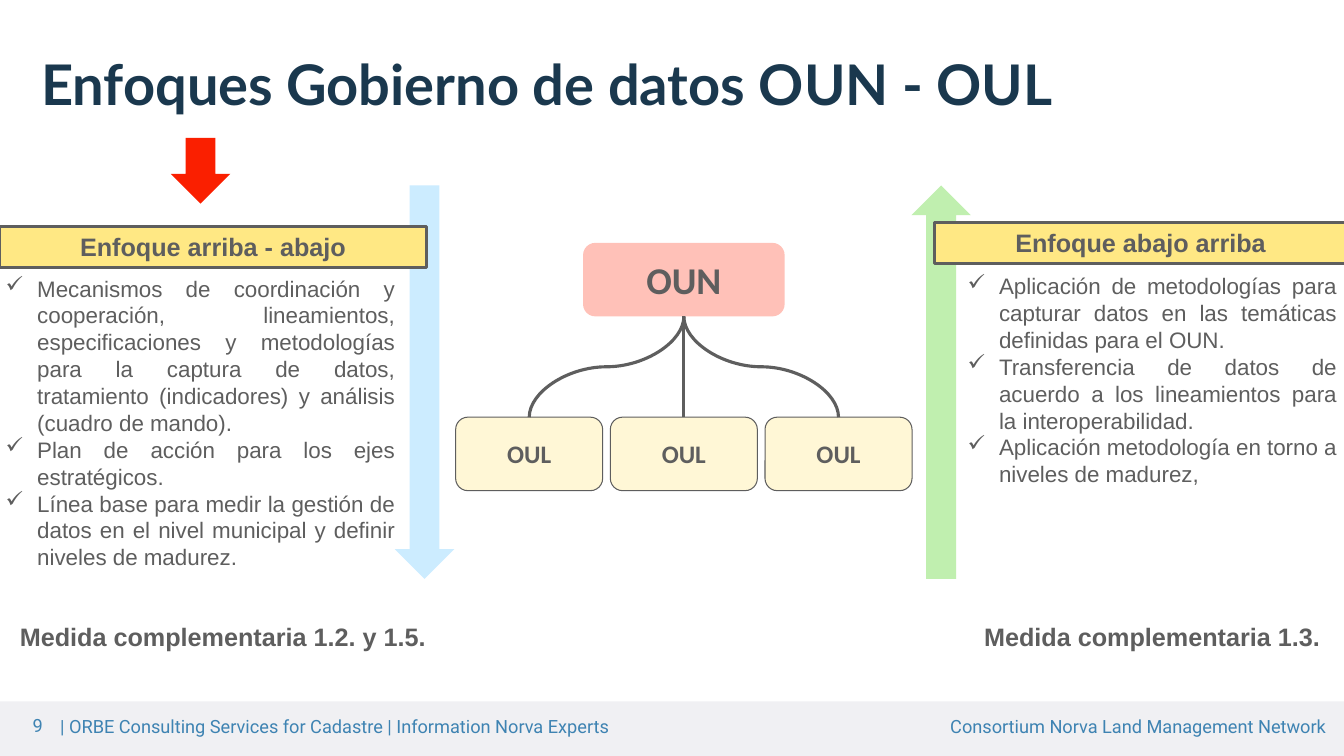
from dataclasses import dataclass

from lxml.etree import SubElement
from pptx import Presentation
from pptx.dml.color import RGBColor
from pptx.enum.shapes import MSO_CONNECTOR, MSO_SHAPE
from pptx.enum.text import MSO_ANCHOR as Anchor, PP_ALIGN as Align
from pptx.oxml.ns import qn
from pptx.util import Pt


@dataclass(frozen=True)
class Theme:
    ink: str = "5E5E5E"
    navy: str = "1A384E"
    footer_blue: str = "3E83B2"
    footer_band: str = "F0F0F3"
    national: str = "FFC1B8"
    local: str = "FFF7D6"
    banner: str = "FFE884"
    descending: str = "CCECFF"
    ascending: str = "C0EFAF"
    marker: str = "FA1F00"
    title_size: float = 40
    national_size: float = 27
    heading_size: float = 18
    body_size: float = 16
    body_leading: float = 19.2
    footer_size: float = 13


THEME = Theme()


def rgb(code):
    return RGBColor.from_string(code)


def place(shape, box):
    shape.left, shape.top, shape.width, shape.height = map(Pt, box)


def write(shape, lines, size, font, color, bold=False, align=Align.CENTER,
          anchor=Anchor.TOP, inset=None):
    frame = shape.text_frame
    frame.text = "\n".join(lines)
    frame.word_wrap = True
    frame.vertical_anchor = anchor
    if inset is not None:
        frame.margin_left = frame.margin_right = Pt(inset)
        frame.margin_top = frame.margin_bottom = Pt(inset)
    for paragraph in frame.paragraphs:
        paragraph.alignment = align
        for run in paragraph.runs:
            run.font.size = Pt(size)
            run.font.name = font
            run.font.bold = bold
            run.font.color.rgb = rgb(color)


def add_label(slide, box, text, size, font, color, **style):
    label = slide.shapes.add_textbox(*map(Pt, box))
    write(label, [text], size, font, color, **style)


def add_block(slide, kind, box, fill, line_width=0):
    block = slide.shapes.add_shape(kind, *map(Pt, box))
    block.shadow.inherit = False
    block.fill.solid()
    block.fill.fore_color.rgb = rgb(fill)
    if line_width:
        block.line.color.rgb = rgb(THEME.ink)
        block.line.width = Pt(line_width)
    else:
        block.line.fill.background()
    return block


def add_node(slide, box, text, fill, size, line_width=0):
    node = add_block(slide, MSO_SHAPE.FLOWCHART_ALTERNATE_PROCESS, box, fill, line_width)
    write(node, [text], size, "Calibri", THEME.ink, bold=True,
          anchor=Anchor.MIDDLE, inset=7.2)


def add_branch(slide, start, end):
    (x0, y0), (x1, y1) = start, end
    mid_x, mid_y = (x0 + x1) / 2, (y0 + y1) / 2
    half_drop, half_reach = (y1 - y0) / 2, (x0 - x1) / 2
    branch = slide.shapes.add_connector(
        MSO_CONNECTOR.CURVE,
        Pt(mid_x - half_drop), Pt(mid_y - half_reach),
        Pt(mid_x + half_drop), Pt(mid_y + half_reach))
    branch.line.color.rgb = rgb(THEME.ink)
    branch.line.width = Pt(2.25)
    properties = branch._element.spPr
    properties.find(qn("a:xfrm")).set("rot", "5400000")
    SubElement(properties, qn("a:effectLst"))


def add_banner(slide, box, text):
    banner = add_block(slide, MSO_SHAPE.RECTANGLE, box, THEME.banner, 2)
    write(banner, [text], THEME.heading_size, "Arial", THEME.ink, bold=True)


def add_checklist(slide, box, items):
    checklist = slide.shapes.add_textbox(*map(Pt, box))
    write(checklist, items, THEME.body_size, "Arial", THEME.ink, align=Align.JUSTIFY)
    for paragraph in checklist.text_frame.paragraphs:
        paragraph.line_spacing = Pt(THEME.body_leading)
        properties = paragraph._p.get_or_add_pPr()
        properties.set("marL", str(Pt(22.5)))
        properties.set("indent", str(Pt(-22.5)))
        SubElement(properties, qn("a:buChar")).set("char", "✓")


def add_footer(slide):
    add_block(slide, MSO_SHAPE.RECTANGLE, (0, 501, 960, 39), THEME.footer_band)
    style = (THEME.footer_size, "Roboto", THEME.footer_blue)
    add_label(slide, (41, 509, 429, 20),
              "| ORBE Consulting Services for Cadastre | Information Norva Experts",
              *style, align=Align.LEFT, anchor=Anchor.MIDDLE, inset=2)
    add_label(slide, (520, 509, 429, 20), "Consortium Norva Land Management Network",
              *style, align=Align.RIGHT, anchor=Anchor.MIDDLE, inset=2)
    add_label(slide, (7, 507, 40, 24), "9", *style)


def add_hierarchy(slide):
    root_x, root_bottom, local_top = 488.5, 226, 298
    local_width, local_pitch = 105, 110.5
    add_node(slide, (root_x - 72, 173.5, 144, 52.5), "OUN",
             THEME.national, THEME.national_size)
    for offset in (-1, 0, 1):
        local_x = root_x + offset * local_pitch
        add_node(slide, (local_x - local_width / 2, local_top, local_width, 52.5),
                 "OUL", THEME.local, THEME.heading_size, 0.75)
        add_branch(slide, (root_x, root_bottom), (local_x, local_top))


def main():
    deck = Presentation()
    deck.slide_width, deck.slide_height = Pt(960), Pt(540)
    slide = deck.slides.add_slide(deck.slide_layouts[5])

    title = slide.shapes.title
    place(title, (27.5, 33, 770, 52.5))
    write(title, ["Enfoques Gobierno de datos OUN - OUL"], THEME.title_size, "Lato",
          THEME.navy, bold=True, align=Align.LEFT, anchor=Anchor.MIDDLE, inset=2)

    add_footer(slide)
    add_hierarchy(slide)

    add_block(slide, MSO_SHAPE.DOWN_ARROW, (282, 132.5, 42.5, 281), THEME.descending)
    add_block(slide, MSO_SHAPE.UP_ARROW, (651, 132.5, 42.5, 281), THEME.ascending)
    add_block(slide, MSO_SHAPE.DOWN_ARROW, (122, 98.5, 42.5, 47), THEME.marker)

    add_banner(slide, (0, 162, 304.5, 29), "Enfoque arriba - abajo")
    add_banner(slide, (667.5, 159, 294.5, 29), "Enfoque abajo arriba")

    add_checklist(slide, (-3, 192.7, 292.3, 220), [
        "Mecanismos de coordinación y cooperación, lineamientos, especificaciones y "
        "metodologías para la captura de datos, tratamiento (indicadores) y análisis "
        "(cuadro de mando).",
        "Plan de acción para los ejes estratégicos.",
        "Línea base para medir la gestión de datos en el nivel municipal y definir "
        "niveles de madurez.",
    ])
    add_checklist(slide, (684, 191, 278, 181), [
        "Aplicación de metodologías para capturar datos en las temáticas definidas "
        "para el OUN.",
        "Transferencia de datos de acuerdo a los lineamientos para la "
        "interoperabilidad.",
        "Aplicación metodología en torno a niveles de madurez,",
    ])

    for box, measure in (
        ((3, 440, 312.5, 29), "Medida complementaria 1.2. y 1.5."),
        ((674, 440, 298, 29), "Medida complementaria 1.3."),
    ):
        add_label(slide, box, measure, THEME.heading_size, "Arial", THEME.ink, bold=True)

    deck.save("out.pptx")


if __name__ == "__main__":
    main()
